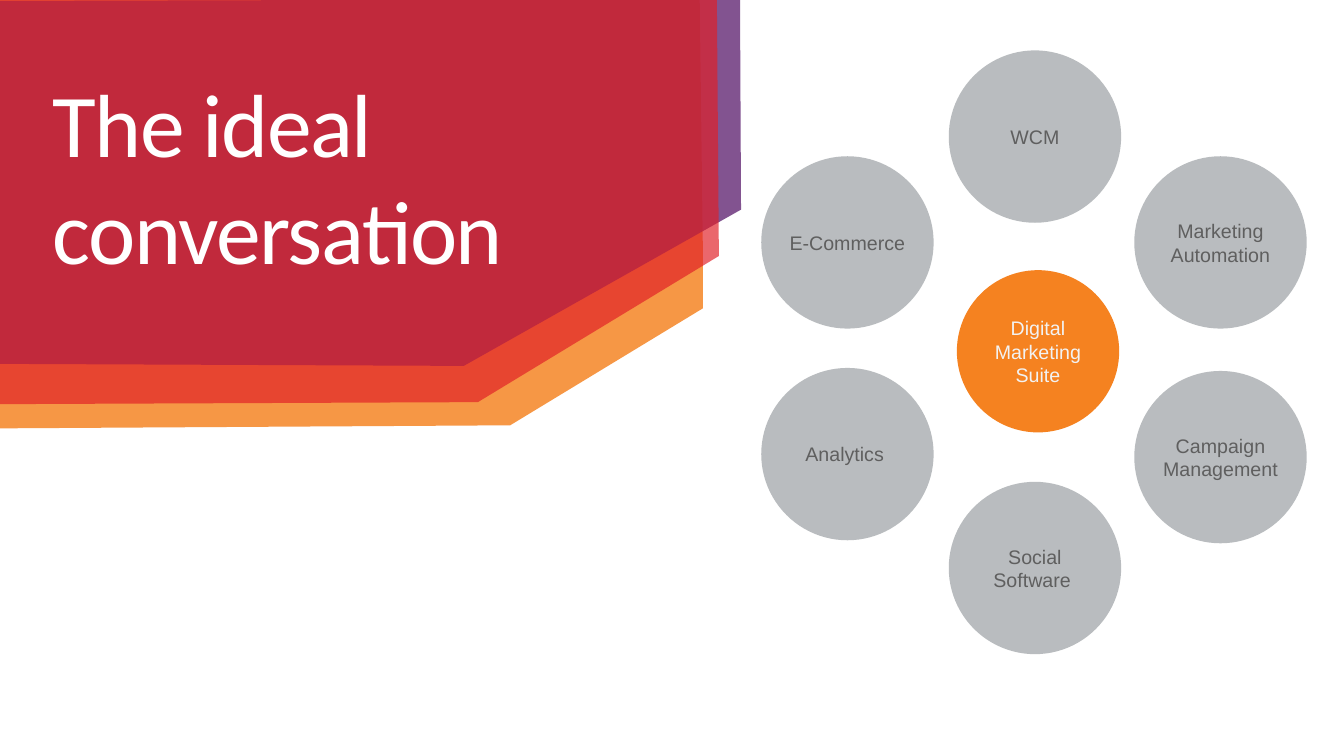
from dataclasses import dataclass

from lxml.etree import SubElement
from pptx import Presentation
from pptx.dml.color import RGBColor
from pptx.enum.shapes import MSO_SHAPE
from pptx.enum.text import MSO_ANCHOR, MSO_AUTO_SIZE, PP_ALIGN
from pptx.oxml.ns import qn
from pptx.util import Inches, Pt


@dataclass(frozen=True)
class Theme:
    orange: str = "F58220"
    purple: str = "632975"
    red: str = "E11F27"
    slate: str = "51595F"
    title_text: str = "FFFFFF"
    channel_text: str = "5F5F5F"
    suite_text: str = "F2F2F2"
    title_font: str = "Calibri"
    label_font: str = "Arial"
    title_size: int = 64
    label_size: int = 14


THEME = Theme()

# Layered banner, back to front: colour, opacity in percent, corners in inches
BANNER = [
    (THEME.orange, 83, [(-0.02, -0.01), (-0.01, 4.25), (5.06, 4.22),
                        (6.97, 3.06), (6.97, 2.4), (6.94, 0)]),
    (THEME.purple, 80, [(-0.01, 0.01), (0, 3.61), (4.6, 3.63),
                        (7.35, 2.08), (7.34, -0.01)]),
    (THEME.red, 68, [(-0.02, -0.01), (0, 4.01), (4.74, 3.99),
                     (7.13, 2.54), (7.11, -0.02)]),
]

# Channels around the suite: label, left, top
LEFT, CENTRE, RIGHT = 7.55, 9.41, 11.25
CHANNEL_SIZE, SUITE_SIZE = 1.71, 1.61
CHANNELS = [
    ("WCM", CENTRE, 0.5),
    ("Social Software ", CENTRE, 4.78),
    ("Analytics ", LEFT, 3.65),
    ("Campaign Management", RIGHT, 3.68),
    ("E-Commerce", LEFT, 1.55),
    ("Marketing Automation", RIGHT, 1.55),
]


def paint(shape, color, opacity=100):
    shape.shadow.inherit = False
    shape.line.fill.background()
    shape.fill.solid()
    shape.fill.fore_color.rgb = RGBColor.from_string(color)
    if opacity < 100:
        srgb = shape.fill._xPr.find(".//" + qn("a:srgbClr"))
        SubElement(srgb, qn("a:alpha"), val=str(opacity * 1000))


def write(shape, text, font, size, color, align, anchor):
    frame = shape.text_frame
    frame_format = {
        "word_wrap": True, "auto_size": MSO_AUTO_SIZE.NONE,
        "vertical_anchor": anchor, "margin_left": 0, "margin_right": 0,
        "margin_top": 0, "margin_bottom": 0,
    }
    for name, value in frame_format.items():
        setattr(frame, name, value)
    paragraph = frame.paragraphs[0]
    paragraph.alignment = align
    run = paragraph.add_run()
    run.text = text
    for name, value in {"name": font, "size": Pt(size)}.items():
        setattr(run.font, name, value)
    run.font.color.rgb = RGBColor.from_string(color)
    return run


def add_panel(slide, color, opacity, corners):
    points = [(Inches(x), Inches(y)) for x, y in corners]
    builder = slide.shapes.build_freeform(*points[0])
    builder.add_line_segments(points[1:], close=True)
    paint(builder.convert_to_shape(), color, opacity)


def add_title(slide, text):
    title = slide.shapes.title
    place = {"left": 0.52, "top": 0.67, "width": 5.94, "height": 2.93}
    for name, value in place.items():
        setattr(title, name, Inches(value))
    run = write(title, text, THEME.title_font, THEME.title_size,
                THEME.title_text, PP_ALIGN.LEFT, MSO_ANCHOR.TOP)
    run.font._element.set("spc", "-100")
    # Bring the title in front of the banner
    slide.shapes._spTree.append(title._element)


def add_circle(slide, label, left, top, size, fill, opacity, text_color):
    circle = slide.shapes.add_shape(
        MSO_SHAPE.OVAL, Inches(left), Inches(top), Inches(size), Inches(size))
    paint(circle, fill, opacity)
    write(circle, label, THEME.label_font, THEME.label_size, text_color,
          PP_ALIGN.CENTER, MSO_ANCHOR.MIDDLE)


def main():
    deck = Presentation()
    deck.slide_width, deck.slide_height = Inches(13.33), Inches(7.5)
    slide = deck.slides.add_slide(deck.slide_layouts[5])

    # Banner and title
    for color, opacity, corners in BANNER:
        add_panel(slide, color, opacity, corners)
    add_title(slide, "The ideal conversation")

    # Channels and the suite at their centre
    for label, left, top in CHANNELS:
        add_circle(slide, label, left, top, CHANNEL_SIZE,
                   THEME.slate, 40, THEME.channel_text)
    add_circle(slide, "Digital Marketing Suite", 9.49, 2.68, SUITE_SIZE,
               THEME.orange, 100, THEME.suite_text)

    deck.save("out.pptx")


if __name__ == "__main__":
    main()
